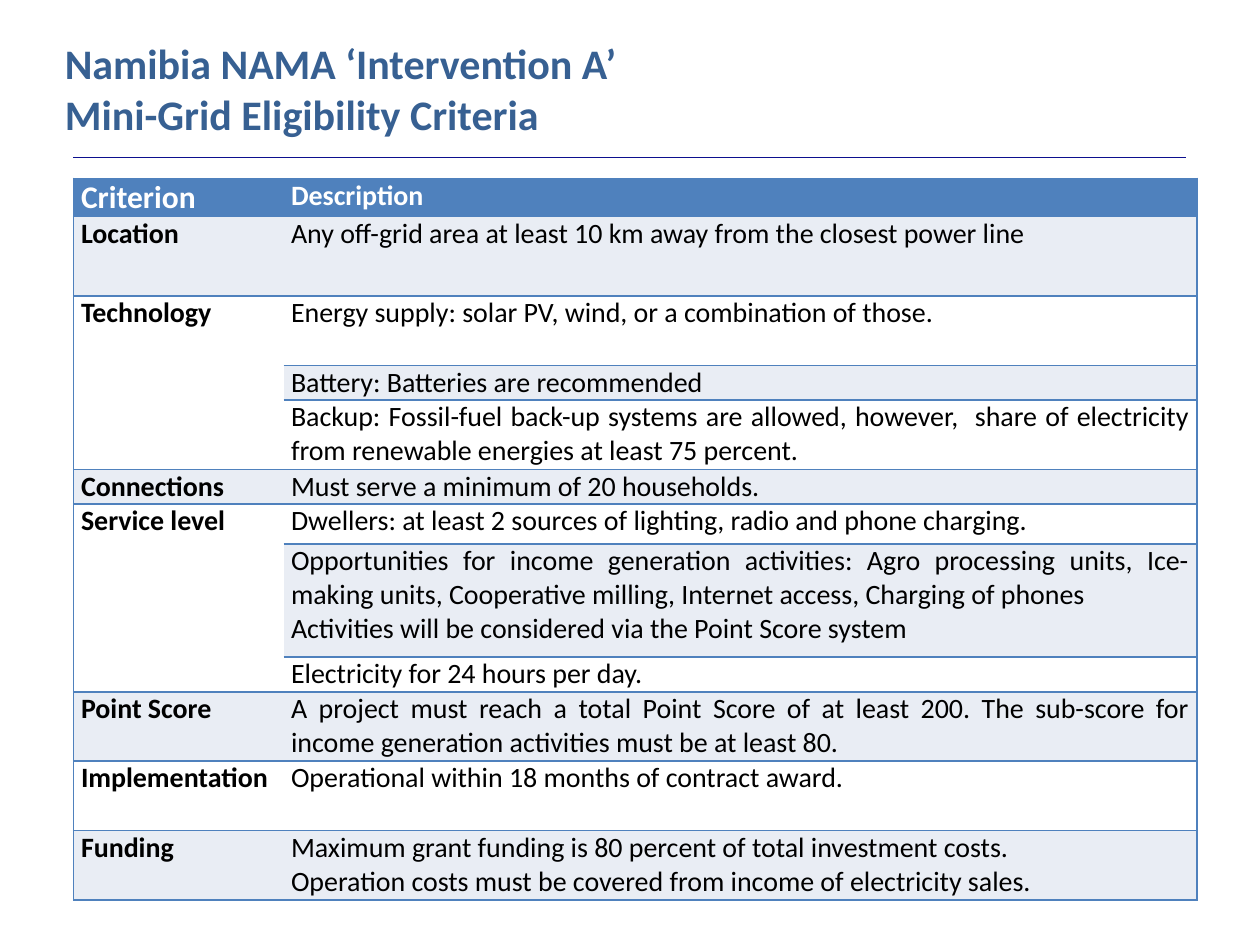
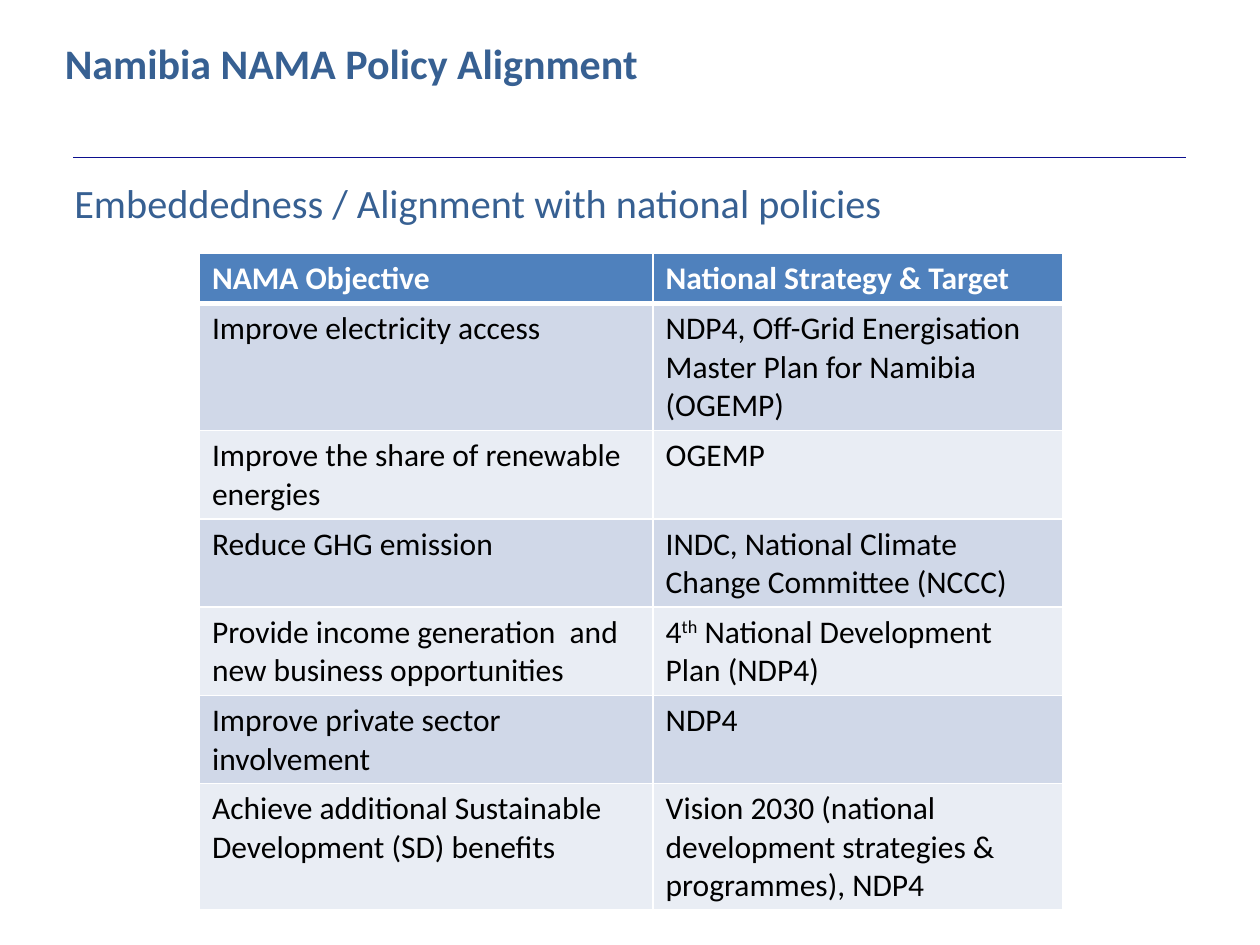
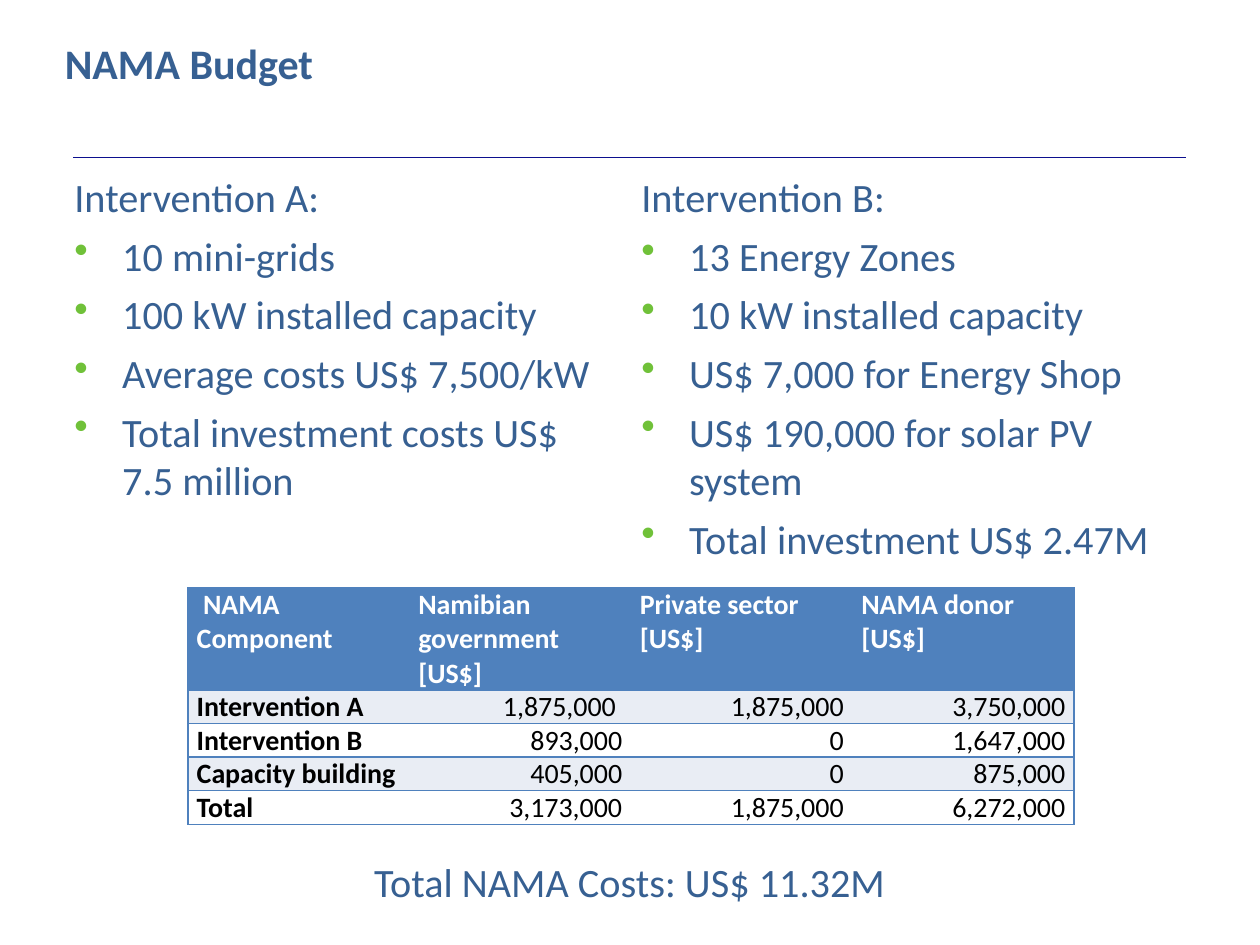
from lxml.etree import SubElement
from pptx import Presentation
from pptx.dml.color import RGBColor as Rgb
from pptx.enum.shapes import MSO_CONNECTOR as Connector
from pptx.enum.text import PP_ALIGN as Align
from pptx.oxml.ns import qn
from pptx.util import Inches, Pt

COLORS = {
    "title": "376092", "rule": "0C0F8E", "bullet": "70C139",
    "header": "4F81BD", "light": "E9EDF4", "medium": "D0D8E8",
    "white": "FFFFFF", "black": "000000",
}
FONT = "Calibri"
UNIT = Inches(1 / 12)  # the slide is a grid of 120 columns and 90 rows
PLAIN_TABLE = "{2D5ABB26-0587-4C30-8999-92F81FD0307C}"


def write(frame, lines, size, color, bold=False, align=Align.LEFT, bullets=False):
    """Fill a text frame; with bullets, the first line is their heading."""
    frame.word_wrap = True
    for i, line in enumerate(lines):
        paragraph = frame.paragraphs[0] if i == 0 else frame.add_paragraph()
        paragraph.text = line
        paragraph.alignment = align
        if bullets and i > 0:
            paragraph.space_before = Pt(6)
            props = paragraph._p.get_or_add_pPr()
            props.set("marL", str(Inches(0.38)))
            props.set("indent", str(-Inches(0.38)))
            tint = SubElement(props, qn("a:buClr"))
            SubElement(tint, qn("a:srgbClr"), val=COLORS["bullet"])
            SubElement(props, qn("a:buChar"), char="•")
        font = paragraph.font
        font.name, font.size, font.bold = FONT, Pt(size), bold
        font.color.rgb = Rgb.from_string(COLORS[color])


def add_grid(slide, left, top, widths, heights, rows, size, bands, line,
             inset=None, inner=False, bold_labels=True, align=Align.LEFT):
    """Add a table; a label of None joins the label above it."""
    table = slide.shapes.add_table(
        len(rows), len(widths), *(round(n * UNIT) for n in
                                  (left, top, sum(widths), sum(heights)))).table
    table._tbl.tblPr.find(qn("a:tableStyleId")).text = PLAIN_TABLE
    for column, width in zip(table.columns, widths):
        column.width = round(width * UNIT)
    for row, height in zip(table.rows, heights):
        row.height = round(height * UNIT)

    labels = [row[0] for row in rows]
    for r, label in enumerate(labels):
        if label is not None:
            end = r
            while end + 1 < len(rows) and labels[end + 1] is None:
                end += 1
            if end > r:
                table.cell(r, 0).merge(table.cell(end, 0))

    for r, row in enumerate(rows):
        for c, text in enumerate(row):
            if text is None:
                continue
            cell = table.cell(r, c)
            if inset is not None:
                cell.margin_left = cell.margin_right = Inches(inset)
                cell.margin_top = cell.margin_bottom = 0
            edges = {"L": inner or c == 0, "R": inner or c == len(widths) - 1,
                     "T": True, "B": True}
            for edge in (name for name, drawn in edges.items() if drawn):
                thick = 3 if inner and r == 0 and edge == "B" else 1
                border = SubElement(cell._tc.get_or_add_tcPr(),
                                    qn("a:ln" + edge), w=str(Pt(thick)))
                paint = SubElement(border, qn("a:solidFill"))
                SubElement(paint, qn("a:srgbClr"), val=COLORS[line])
            cell.fill.solid()
            band = "header" if r == 0 else bands[(r - 1) % 2]
            cell.fill.fore_color.rgb = Rgb.from_string(COLORS[band])
            write(cell.text_frame, text.split("\n"), size,
                  "black" if r else "white",
                  bold=r == 0 or (c == 0 and bold_labels),
                  align=align if r and c else Align.LEFT)
    return table


deck = Presentation()
deck.slide_width, deck.slide_height = 120 * UNIT, 90 * UNIT
criteria, policy, budget = (
    deck.slides.add_slide(deck.slide_layouts[6]) for _ in range(3))

# Titles and the rule below them
titles = [
    (criteria, ["Namibia NAMA ‘Intervention A’", "Mini-Grid Eligibility Criteria"]),
    (policy, ["Namibia NAMA Policy Alignment"]),
    (budget, ["NAMA Budget"]),
]
for slide, lines in titles:
    rule = slide.shapes.add_connector(
        Connector.STRAIGHT, 7 * UNIT, 15 * UNIT, 113 * UNIT, 15 * UNIT)
    rule.line.color.rgb = Rgb.from_string(COLORS["rule"])
    rule.line.width = Pt(1)
    SubElement(rule._element.spPr, qn("a:effectLst"))
    title = slide.shapes.add_textbox(5 * UNIT, 3 * UNIT, 83 * UNIT,
                                     (1 + 5 * len(lines)) * UNIT)
    write(title.text_frame, lines, 24, "title", bold=True)

# Eligibility criteria
criteria_rows = [
    ("Criterion", "Description"),
    ("Location", "Any off-grid area at least 10 km away from the closest power line"),
    ("Technology", "Energy supply: solar PV, wind, or a combination of those."),
    (None, "Battery: Batteries are recommended"),
    (None, "Backup: Fossil-fuel back-up systems are allowed, however,  share of "
           "electricity from renewable energies at least 75 percent."),
    ("Connections", "Must serve a minimum of 20 households."),
    ("Service level", "Dwellers: at least 2 sources of lighting, radio and phone charging."),
    (None, "Opportunities for income generation activities: Agro processing units, "
           "Ice-making units, Cooperative milling, Internet access, Charging of phones\n"
           "Activities will be considered via the Point Score system"),
    (None, "Electricity for 24 hours per day."),
    ("Point Score", "A project must reach a total Point Score of at least 200. The "
                    "sub-score for income generation activities must be at least 80."),
    ("Implementation", "Operational within 18 months of contract award."),
    ("Funding", "Maximum grant funding is 80 percent of total investment costs.\n"
                "Operation costs must be covered from income of electricity sales."),
]
criteria_heights = [3.6, 7.6, 6.6, 3.3, 6.6, 3.3, 3.8, 10.8, 3.3, 6.6, 6.6, 6.6]
criteria_table = add_grid(
    criteria, 7, 17, [20, 87], criteria_heights, criteria_rows, 16,
    ["light", "white"], "header", inset=0.06, align=Align.JUSTIFY)
criteria_table.cell(0, 0).text_frame.paragraphs[0].font.size = Pt(18)

# Policy alignment
policy_rows = [
    ("NAMA Objective", "National Strategy & Target"),
    ("Improve electricity access",
     "NDP4, Off-Grid Energisation Master Plan for Namibia (OGEMP)"),
    ("Improve the share of renewable energies", "OGEMP"),
    ("Reduce GHG emission", "INDC, National Climate Change Committee (NCCC)"),
    ("Provide income generation  and new business opportunities", "4"),
    ("Improve private sector involvement", "NDP4"),
    ("Achieve additional Sustainable Development (SD) benefits",
     "Vision 2030 (national development strategies & programmes), NDP4"),
]
policy_table = add_grid(
    policy, 19, 24.1, [43.2, 39], [4.8, 12.1] + [8.4] * 4 + [11.9], policy_rows,
    18, ["medium", "light"], "white", inner=True, bold_labels=False)
fourth_plan = policy_table.cell(4, 1).text_frame.paragraphs[0]
ordinal = fourth_plan.add_run()
ordinal.text = "th"
ordinal.font._element.set("baseline", "30000")
fourth_plan.add_run().text = " National Development Plan (NDP4)"

# Budget by component
budget_rows = [
    (" NAMA Component", "Namibian government  [US$]", "Private sector [US$]",
     "NAMA donor [US$]"),
    ("Intervention A", "1,875,000 ", "1,875,000", "3,750,000"),
    ("Intervention B", "893,000", "0", "1,647,000"),
    ("Capacity building", "405,000", "0", "875,000"),
    ("Total", "3,173,000", "1,875,000", "6,272,000"),
]
add_grid(budget, 17.9, 56, [21.1] * 4, [9.7] + [3.2] * 4, budget_rows, 16,
         ["light", "white"], "header", inset=0.07, align=Align.RIGHT)

# Body texts
intervention_a = ["Intervention A:", "10 mini-grids", "100 kW installed capacity",
                  "Average costs US$ 7,500/kW",
                  "Total investment costs US$ 7.5 million"]
intervention_b = ["Intervention B:", "13 Energy Zones", "10 kW installed capacity",
                  "US$ 7,000 for Energy Shop", "US$ 190,000 for solar PV system",
                  "Total investment US$ 2.47M"]
bodies = [
    (policy, (5.9, 16.4, 110, 6),
     ["Embeddedness / Alignment with national policies"], Align.LEFT),
    (budget, (5.9, 15.8, 52.2, 33.1), intervention_a, Align.LEFT),
    (budget, (59.9, 15.8, 55, 38.8), intervention_b, Align.LEFT),
    (budget, (28, 81.1, 64, 5.9), ["Total NAMA Costs: US$ 11.32M"], Align.CENTER),
]
for slide, box, lines, align in bodies:
    body = slide.shapes.add_textbox(*(round(n * UNIT) for n in box))
    write(body.text_frame, lines, 23, "title", align=align, bullets=True)

deck.save("out.pptx")
